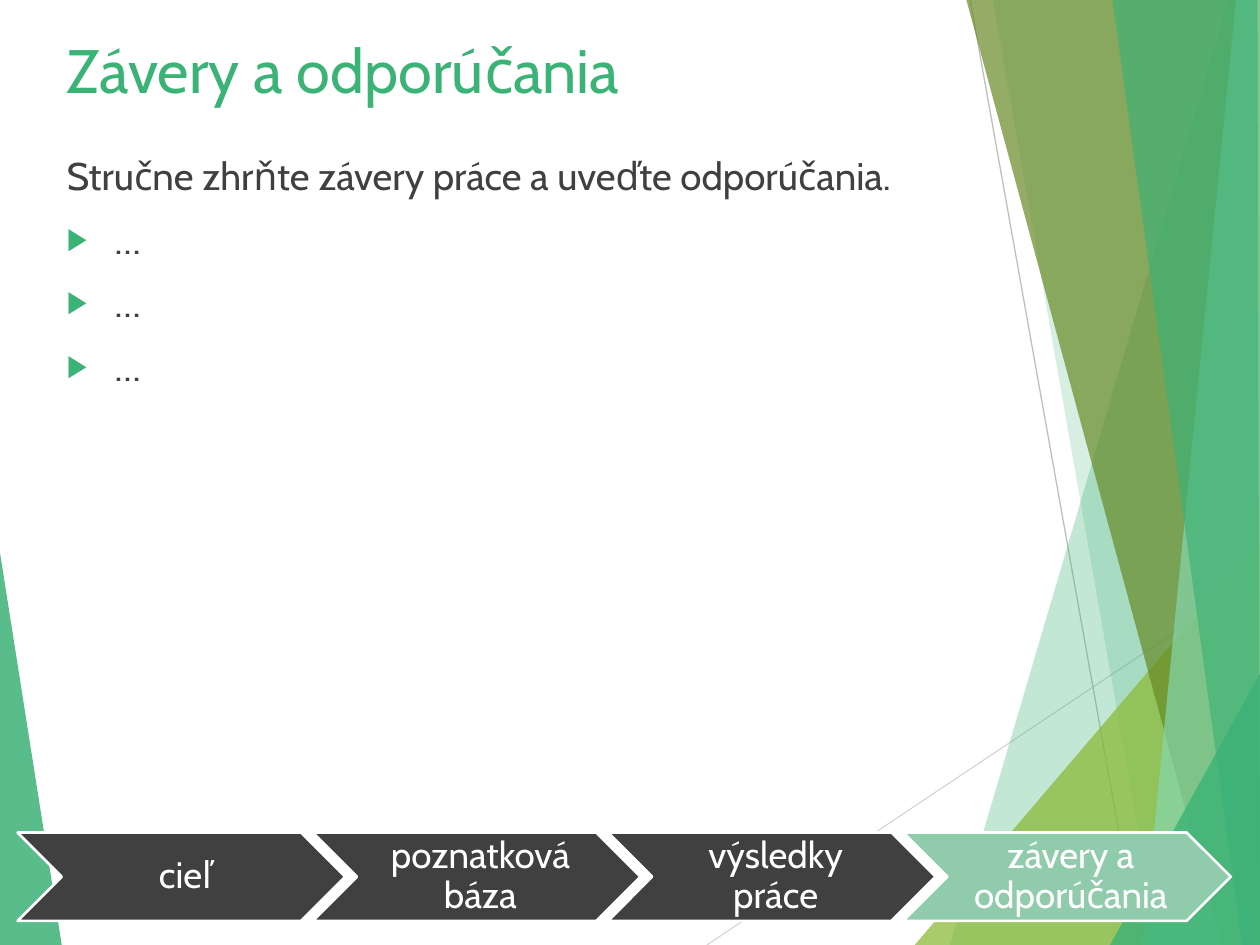
from lxml.etree import SubElement as Sub
from pptx import Presentation
from pptx.dml.color import RGBColor as RGB
from pptx.enum.shapes import MSO_CONNECTOR as Conn, MSO_SHAPE as Shape
from pptx.enum.text import MSO_ANCHOR as Anchor, MSO_AUTO_SIZE as Auto, PP_ALIGN as Align
from pptx.oxml.ns import qn
from pptx.util import Inches, Pt

HUES = {"green": "3BB276", "lime": "8AB833", "olive": "678A26", "mint": "84D6AD",
        "sage": "90CCAB", "dark": "404040", "white": "FFFFFF",
        "pale": "D9D9D9", "grey": "BFBFBF"}

deck = Presentation()
deck.slide_width, deck.slide_height = Inches(10), Inches(7.5)
slide = deck.slides.add_slide(deck.slide_layouts[1])
shapes = slide.shapes


def at(x, y):
    """Turn percent of the slide's width and height into lengths."""
    return int(deck.slide_width * x / 100), int(deck.slide_height * y / 100)


def style(par, size, hue, align):
    par.alignment = align
    for run in par.runs:
        run.font.name = "Cabin"
        run.font.size = Pt(size)
        run.font.color.rgb = RGB.from_string(HUES[hue])


# Backdrop: left wedge, two thin lines, then the fan on the right
wedge = [("green", 85, [(0, 58.5), (4.9, 100), (0, 100)])]
fan = [
    ("green", 30, [(97.5, 0), (75.4, 100), (100, 100), (100, 0)]),
    ("green", 20, [(78.8, 0), (91.9, 100), (100, 100), (100, 0)]),
    ("lime", 72, [(72.6, 100), (100, 57.2), (100, 100)]),
    ("olive", 70, [(76.7, 0), (97, 100), (100, 100), (100, 0)]),
    ("mint", 70, [(98.1, 0), (90.7, 100), (100, 100), (100, 0)]),
    ("green", 65, [(88.3, 0), (98.6, 100), (100, 100), (99.8, 0)]),
    ("green", 80, [(88.1, 100), (100, 71.3), (100, 100)]),
]
lines = [("pale", (56.1, 100), (100, 60.9)), ("grey", (77, 0), (90.4, 100))]

for hue, start, end in lines:
    line = shapes.add_connector(Conn.STRAIGHT, *at(*start), *at(*end))
    line.line.color.rgb = RGB.from_string(HUES[hue])
    line.line.width = Pt(0.75)
    Sub(line._element.spPr, qn("a:effectLst"))

for hue, alpha, points in wedge + fan:
    first, *rest = [at(*point) for point in points]
    pen = shapes.build_freeform(*first)
    pen.add_line_segments(rest)
    facet = pen.convert_to_shape()
    facet.shadow.inherit = False
    facet.line.fill.background()
    facet.fill.solid()
    facet.fill.fore_color.rgb = RGB.from_string(HUES[hue])
    tint = facet._element.spPr.find(".//" + qn("a:srgbClr"))
    Sub(tint, qn("a:alpha"), val=str(alpha * 1000))

# Title and body, brought in front of the backdrop
title, body = shapes.title, slide.placeholders[1]
for box, spot, size in [(title, (4.3, 2.5), (71.4, 9.4)),
                        (body, (4.3, 15.4), (76.1, 65.6))]:
    shapes._spTree.append(box._element)
    box.left, box.top = at(*spot)
    box.width, box.height = at(*size)
    box.text_frame.auto_size = Auto.NONE

title.text_frame.text = "Závery a odporúčania"
title.text_frame.vertical_anchor = Anchor.BOTTOM
style(title.text_frame.paragraphs[0], 35, "green", Align.LEFT)

body.text_frame.text = "\n".join(
    ["Stručne zhrňte závery práce a uveďte odporúčania."] + ["…"] * 3)
for i, par in enumerate(body.text_frame.paragraphs):
    props = par._p.get_or_add_pPr()
    dent = Inches(0.38) if i else 0
    props.set("marL", str(dent))
    props.set("indent", str(-dent))
    if i:
        Sub(Sub(props, qn("a:buClr")), qn("a:srgbClr"), val=HUES["green"])
        Sub(props, qn("a:buSzPct"), val="80000")
        Sub(props, qn("a:buChar"), char="▶")
    else:
        Sub(props, qn("a:buNone"))
    par.space_before = Pt(10 if i else 0)
    style(par, 22, "dark", Align.JUSTIFY)

# Progress chevrons, the current step in sage
steps = ["cieľ", "poznatková báza", "výsledky práce", "závery a odporúčania"]
for i, step in enumerate(steps):
    arrow = shapes.add_shape(Shape.CHEVRON, *at(1.4 + 23.43 * i, 88.1), *at(26, 9.35))
    arrow.shadow.inherit = False
    arrow.fill.solid()
    arrow.fill.fore_color.rgb = RGB.from_string(
        HUES["sage" if step == steps[-1] else "dark"])
    arrow.line.color.rgb = RGB.from_string(HUES["white"])
    arrow.line.width = Pt(1.5)
    frame = arrow.text_frame
    frame.text = step
    frame.word_wrap = True
    frame.vertical_anchor = Anchor.MIDDLE
    frame.margin_left = Inches(0.09)
    frame.margin_right = frame.margin_top = frame.margin_bottom = Inches(0.03)
    frame.paragraphs[0].line_spacing = 0.9
    style(frame.paragraphs[0], 21, "white", Align.CENTER)

deck.save("out.pptx")
